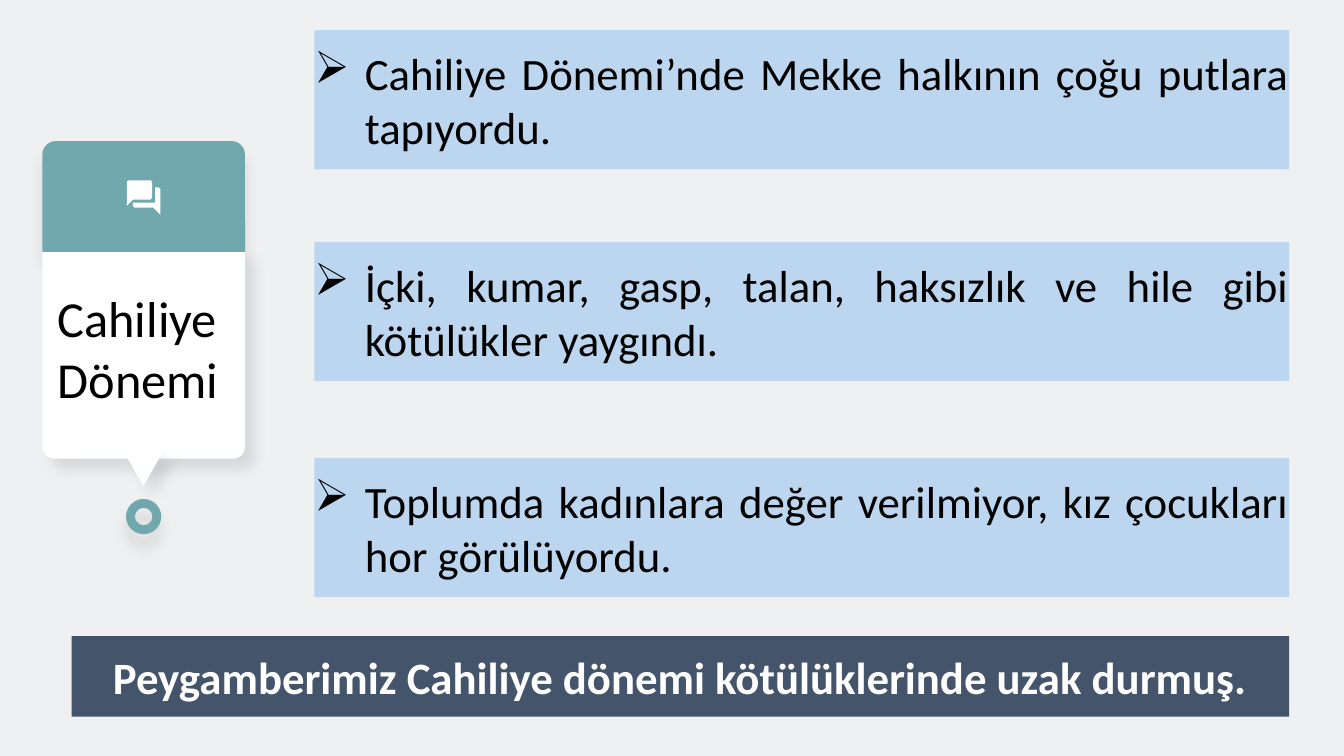
from lxml import etree
from pptx import Presentation
from pptx.dml.color import RGBColor
from pptx.enum.shapes import MSO_SHAPE as Shape
from pptx.enum.text import MSO_ANCHOR as Anchor, MSO_AUTO_SIZE as Fit, PP_ALIGN as Align
from pptx.oxml import parse_xml
from pptx.oxml.ns import nsdecls, qn
from pptx.util import Pt

TEAL, WHITE, BLACK = "71A8AD", "FFFFFF", "000000"


def paint(part, color):
    """Solid fill, no line, no shadow."""
    part.fill.solid()
    part.fill.fore_color.rgb = RGBColor.from_string(color)
    part.line.fill.background()
    part.shadow.inherit = False


def write(para, text, size, color, bold=False):
    run = para.add_run()
    run.text = text
    run.font.name = "Calibri"
    run.font.size = Pt(size)
    run.font.bold = bold
    run.font.color.rgb = RGBColor.from_string(color)


deck = Presentation()
deck.slide_width, deck.slide_height = Pt(960), Pt(540)
slide = deck.slides.add_slide(deck.slide_layouts[5])
shapes = slide.shapes
slide.background.fill.solid()
slide.background.fill.fore_color.rgb = RGBColor.from_string("EEF0F2")

# Card: header, body with pointer, ring
head = shapes.add_shape(Shape.ROUND_2_SAME_RECTANGLE, Pt(30.24), Pt(100.8), Pt(144.8), Pt(79.2))
head.adjustments[0] = 0.121
group = shapes.add_group_shape()
body = group.shapes.add_shape(
    Shape.ROUND_2_SAME_RECTANGLE, Pt(30.24), Pt(180), Pt(144.8), Pt(147.6))
body.adjustments[0] = 0.059
tip = group.shapes.add_shape(
    Shape.ISOSCELES_TRIANGLE, Pt(88), Pt(322), Pt(28.8), Pt(25.2))
body.rotation = tip.rotation = 180
ring = shapes.add_shape(Shape.DONUT, Pt(90), Pt(356.4), Pt(25.2), Pt(25.2))

for part, color, angle in [(head, TEAL, 90), (body, WHITE, 45), (tip, WHITE, 45), (ring, TEAL, 90)]:
    paint(part, color)
    glow = part._element.spPr.find(qn("a:effectLst"))
    glow.append(parse_xml(
        f'<a:outerShdw {nsdecls("a")} blurRad="{Pt(10)}" dist="{Pt(10)}" '
        f'dir="{angle * 60000}" algn="t" rotWithShape="0">'
        '<a:srgbClr val="000000"><a:alpha val="10000"/></a:srgbClr></a:outerShdw>'))

# Speech bubble icon, in tenths of a point
front = [(1130, 1339), (1109, 1339), (1109, 1447), (950, 1447), (950, 1473), (960, 1483),
         (1094, 1483), (1145, 1534), (1145, 1350), (1135, 1339)]
back = [(1087, 1406), (1087, 1299), (1078, 1289), (917, 1289), (907, 1299), (907, 1469),
        (950, 1426), (1078, 1426)]
pen = shapes.build_freeform(*front[0], scale=Pt(0.1))
pen.add_line_segments(front[1:])
pen.move_to(*back[0])
pen.add_line_segments(back[1:])
paint(pen.convert_to_shape(), WHITE)

# Title on the card, brought in front of it
title = shapes.title
shapes._spTree.append(title._element)
title.left, title.top, title.width, title.height = Pt(33.84), Pt(201.6), Pt(137.5), Pt(94.3)
frame = title.text_frame
frame.word_wrap = True
frame.auto_size = Fit.SHAPE_TO_FIT_TEXT
frame.vertical_anchor = Anchor.TOP
for para, word in [(frame.paragraphs[0], "Cahiliye"), (frame.add_paragraph(), "Dönemi")]:
    para.alignment = Align.LEFT
    write(para, word, 36, BLACK)

# Bulleted bars
facts = [
    (21.6, "Cahiliye Dönemi’nde Mekke halkının çoğu putlara tapıyordu."),
    (172.8, "İçki, kumar, gasp, talan, haksızlık ve hile gibi kötülükler yaygındı."),
    (327, "Toplumda kadınlara değer verilmiyor, kız çocukları hor görülüyordu."),
]
for top, text in facts:
    bar = shapes.add_shape(Shape.RECTANGLE, Pt(224.64), Pt(top), Pt(696.24), Pt(99.36))
    paint(bar, "BBD6EE")
    frame = bar.text_frame
    frame.word_wrap = True
    frame.vertical_anchor = Anchor.MIDDLE
    frame.margin_left = frame.margin_right = frame.margin_top = frame.margin_bottom = 0
    para = frame.paragraphs[0]
    para.alignment = Align.JUSTIFY
    props = para._p.get_or_add_pPr()
    props.set("marL", str(Pt(36)))
    props.set("indent", str(-Pt(36)))
    tint = etree.SubElement(props, qn("a:buClr"))
    etree.SubElement(tint, qn("a:srgbClr"), val=BLACK)
    etree.SubElement(props, qn("a:buFont"), typeface="Wingdings", charset="2")
    etree.SubElement(props, qn("a:buChar"), char="Ø")
    write(para, text, 32, BLACK)

# Closing line
foot = shapes.add_shape(Shape.RECTANGLE, Pt(51.12), Pt(454.4), Pt(869.76), Pt(57.6))
paint(foot, "44546A")
frame = foot.text_frame
frame.word_wrap = True
frame.vertical_anchor = Anchor.MIDDLE
para = frame.paragraphs[0]
para.alignment = Align.CENTER
write(para, "Peygamberimiz Cahiliye dönemi kötülüklerinde uzak durmuş.", 32, WHITE, True)

deck.save("out.pptx")
